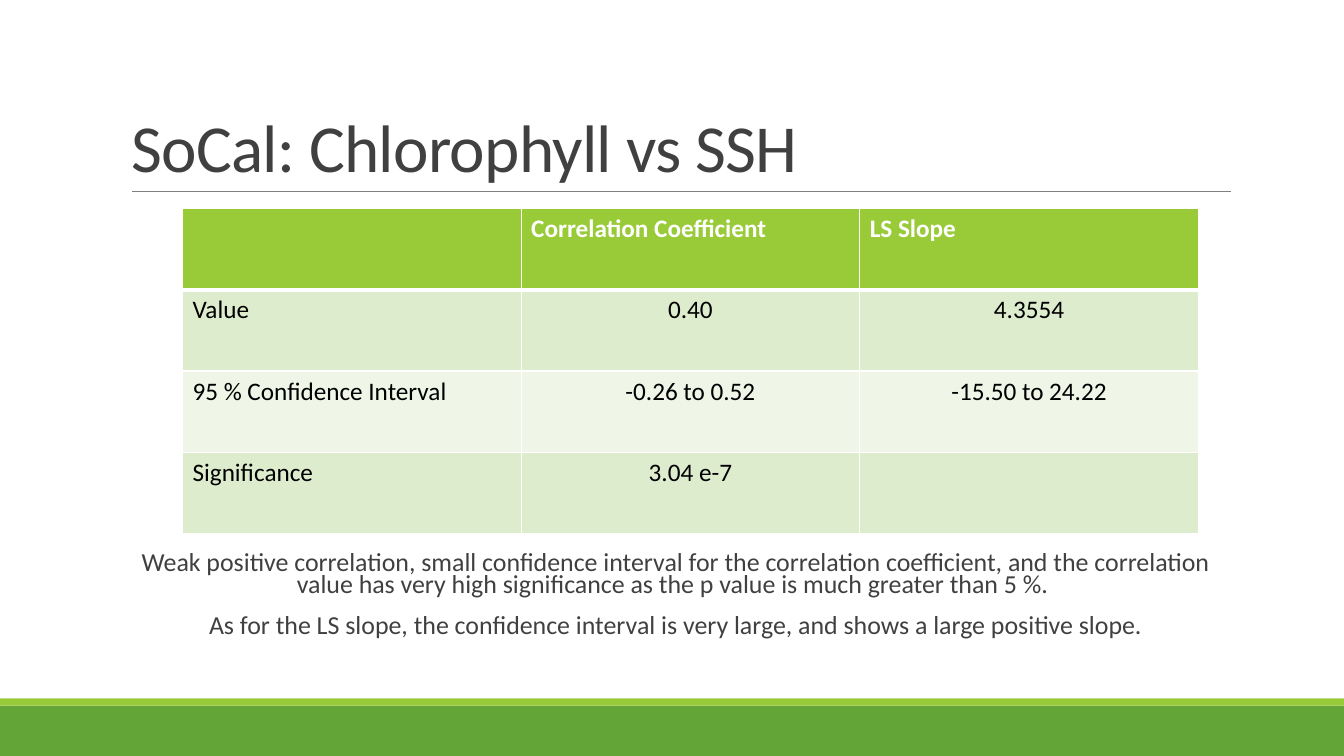
from dataclasses import dataclass

from lxml import etree
from pptx import Presentation
from pptx.dml.color import RGBColor
from pptx.enum import shapes, text
from pptx.oxml import ns
from pptx.util import Cm, Pt


@dataclass(frozen=True)
class Theme:
    font: str = "Calibri"
    ink: str = "404040"
    black: str = "000000"
    white: str = "FFFFFF"
    rule: str = "808080"
    green: str = "63A537"
    lime: str = "99CB38"
    bands: tuple[str, str] = ("DEECCE", "EFF6E8")
    title: float = 48
    body: float = 18.5
    cell: float = 18


@dataclass(frozen=True)
class Box:
    left: float
    top: float
    width: float
    height: float

    def cm(self) -> tuple[Cm, Cm, Cm, Cm]:
        return Cm(self.left), Cm(self.top), Cm(self.width), Cm(self.height)


@dataclass(frozen=True)
class Bar:
    box: Box
    fill: str


THEME = Theme()
WIDTH, HEIGHT = 33.87, 19.05
BARS = [
    Bar(Box(0, 17.78, WIDTH, 1.27), THEME.green),
    Bar(Box(0, 17.6, WIDTH, 0.18), THEME.lime),
]
TITLE = Box(3.05, 0.79, 27.94, 4.04)
BODY = Box(3.05, 13.84, 27.94, 2.46)
GRID = Box(4.6, 5.26, 25.6, 8.18)
ROWS = [
    ("", "Correlation Coefficient", "LS Slope"),
    ("Value", "0.40", "4.3554"),
    ("95 % Confidence Interval", "-0.26 to 0.52", "-15.50 to 24.22"),
    ("Significance", "3.04 e-7", ""),
]
NOTES = [
    "Weak positive correlation, small confidence interval for the correlation "
    "coefficient, and the correlation value has very high significance as the "
    "p value is much greater than 5 %. ",
    "As for the LS slope, the confidence interval is very large, and shows a "
    "large positive slope.",
]


def rgb(code: str) -> RGBColor:
    return RGBColor.from_string(code)


def style(para, size: float, color: str, align, bold: bool = False) -> None:
    para.alignment = align
    for run in para.runs:
        run.font.name = THEME.font
        run.font.size = Pt(size)
        run.font.bold = bold
        run.font.color.rgb = rgb(color)


def place(shape, box: Box) -> None:
    shape.left, shape.top, shape.width, shape.height = box.cm()
    shape.text_frame.word_wrap = True
    shape.text_frame.auto_size = text.MSO_AUTO_SIZE.NONE


def add_bar(slide, bar: Bar) -> None:
    shape = slide.shapes.add_shape(shapes.MSO_SHAPE.RECTANGLE, *bar.box.cm())
    shape.shadow.inherit = False
    shape.fill.solid()
    shape.fill.fore_color.rgb = rgb(bar.fill)
    shape.line.fill.background()


def add_rule(slide) -> None:
    line = slide.shapes.add_connector(
        shapes.MSO_CONNECTOR.STRAIGHT, Cm(3.33), Cm(4.83), Cm(31.01), Cm(4.83))
    line.line.color.rgb = rgb(THEME.rule)
    line.line.width = Pt(0.5)
    etree.SubElement(line._element.spPr, ns.qn("a:effectLst"))


def fill_title(slide) -> None:
    shape = slide.shapes.title
    place(shape, TITLE)
    frame = shape.text_frame
    frame.vertical_anchor = text.MSO_ANCHOR.BOTTOM
    frame.text = "SoCal: Chlorophyll vs SSH"
    para = frame.paragraphs[0]
    para.line_spacing = 0.85
    style(para, THEME.title, THEME.ink, text.PP_ALIGN.LEFT)
    para.runs[0].font._element.set("spc", "-50")


def fill_body(slide) -> None:
    shape = slide.placeholders[1]
    place(shape, BODY)
    frame = shape.text_frame
    frame.margin_left = frame.margin_right = 0
    frame.text = "\n".join(NOTES)
    for para in frame.paragraphs:
        para.line_spacing = 0.7
        para.space_before, para.space_after = Pt(12), Pt(2)
        style(para, THEME.body, THEME.ink, text.PP_ALIGN.CENTER)
        props = para._p.get_or_add_pPr()
        props.set("marL", "0")
        props.set("indent", "0")
        etree.SubElement(props, ns.qn("a:buNone"))


def edge(cell, side: str, width: float) -> None:
    """Draw one white border; side is L, R, T or B."""
    line = etree.SubElement(cell._tc.get_or_add_tcPr(), ns.qn(f"a:ln{side}"),
                            w=str(Pt(width)))
    fill = etree.SubElement(line, ns.qn("a:solidFill"))
    etree.SubElement(fill, ns.qn("a:srgbClr"), val=THEME.white)


def add_grid(slide) -> None:
    count, cols = len(ROWS), len(ROWS[0])
    table = slide.shapes.add_table(count, cols, *GRID.cm()).table
    for row, words in enumerate(ROWS):
        head = row == 0
        for col, word in enumerate(words):
            cell = table.cell(row, col)
            cell.text = word
            mid = not head and col > 0
            style(cell.text_frame.paragraphs[0], THEME.cell,
                  THEME.white if head else THEME.black,
                  text.PP_ALIGN.CENTER if mid else text.PP_ALIGN.LEFT, head)
            for side in "LRTB":
                thick = (row, side) in ((0, "B"), (1, "T"))
                edge(cell, side, 3 if thick else 1)
            cell.fill.solid()
            cell.fill.fore_color.rgb = rgb(
                THEME.lime if head else THEME.bands[(row - 1) % 2])


def main() -> None:
    deck = Presentation()
    deck.slide_width, deck.slide_height = Cm(WIDTH), Cm(HEIGHT)
    slide = deck.slides.add_slide(deck.slide_layouts[1])
    for bar in BARS:
        add_bar(slide, bar)
    add_rule(slide)
    fill_title(slide)
    fill_body(slide)
    add_grid(slide)
    deck.save("out.pptx")


if __name__ == "__main__":
    main()
